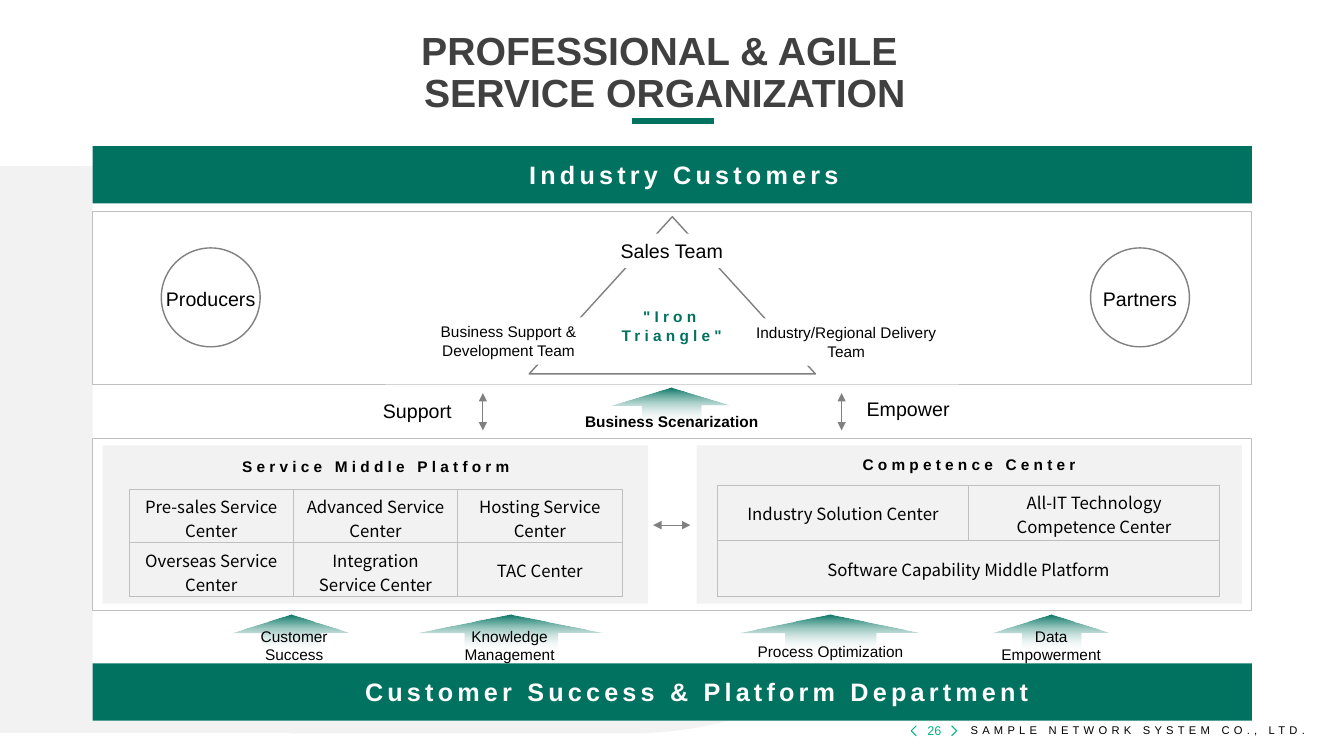
from dataclasses import dataclass
import pptx
import pptx.util
import pptx.dml.color
import pptx.enum.shapes
import pptx.enum.text
import pptx.oxml
import pptx.oxml.ns
from lxml import etree

Pt = pptx.util.Pt
Kind = pptx.enum.shapes.MSO_SHAPE
Align = pptx.enum.text.PP_ALIGN
Anchor = pptx.enum.text.MSO_ANCHOR


@dataclass(frozen=True)
class Theme:
    green: str = "017260"
    mint: str = "04B384"
    pale: str = "F2F2F2"
    white: str = "FFFFFF"
    black: str = "000000"
    dark: str = "404040"
    gray: str = "808080"
    edge: str = "BFBFBF"
    font: str = "Arial"
    grid_font: str = "Noto Sans CJK SC"
    title: float = 28
    bar: float = 18
    role: float = 14
    cell: float = 12
    note: float = 11
    page: float = 9
    foot: float = 8


T = Theme()


@dataclass(frozen=True)
class Box:
    x: float
    y: float
    w: float
    h: float


@dataclass(frozen=True)
class Label:
    text: str
    box: Box
    size: float = T.note
    color: str = T.black
    bold: bool = False
    wide: bool = False
    fill: str = ""
    align: int = Align.CENTER
    anchor: int = Anchor.TOP
    lead: float = 1.0


@dataclass(frozen=True)
class Form:
    kind: int
    box: Box
    fill: str = ""
    line: str = ""
    width: float = 1


@dataclass(frozen=True)
class Rise:
    x: float
    y: float
    w: float
    note: Label


@dataclass(frozen=True)
class Rule:
    x1: float
    y1: float
    x2: float
    y2: float
    color: str = T.gray
    width: float = 0.5
    heads: bool = True


@dataclass(frozen=True)
class Grid:
    box: Box
    rows: tuple


deck = pptx.Presentation()
deck.slide_width, deck.slide_height = Pt(960), Pt(540)
slide = deck.slides.add_slide(deck.slide_layouts[6])
shapes = slide.shapes


def rgb(code: str):
    return pptx.dml.color.RGBColor.from_string(code)


def place(box: Box) -> tuple:
    return Pt(box.x), Pt(box.y), Pt(box.w), Pt(box.h)


def style(para, size: float, color: str, font: str = T.font,
          bold: bool = False, wide: bool = False) -> None:
    for run in para.runs:
        run.font.name, run.font.size, run.font.bold = font, Pt(size), bold
        run.font.color.rgb = rgb(color)
        if wide:
            run.font._element.set("spc", "300")


def write(label: Label) -> None:
    item = shapes.add_textbox(*place(label.box))
    if label.fill:
        item.fill.solid()
        item.fill.fore_color.rgb = rgb(label.fill)
    frame = item.text_frame
    frame.word_wrap = True
    frame.vertical_anchor = label.anchor
    frame.text = label.text
    para = frame.paragraphs[0]
    para.alignment = label.align
    para.line_spacing = label.lead
    style(para, label.size, label.color, bold=label.bold, wide=label.wide)


def draw(form: Form):
    item = shapes.add_shape(form.kind, *place(form.box))
    item.shadow.inherit = False
    if form.fill:
        item.fill.solid()
        item.fill.fore_color.rgb = rgb(form.fill)
    else:
        item.fill.background()
    if form.line:
        item.line.color.rgb = rgb(form.line)
        item.line.width = Pt(form.width)
    else:
        item.line.fill.background()
    return item


def lift(rise: Rise) -> None:
    item = draw(Form(Kind.UP_ARROW, Box(rise.x, rise.y, rise.w, 25.9)))
    item.fill.gradient()
    item.fill.gradient_angle = 270
    for stop, code in zip(item.fill.gradient_stops, (T.green, T.white)):
        stop.color.rgb = rgb(code)
    last = item._element.xpath(".//a:gs/a:srgbClr")[-1]
    etree.SubElement(last, pptx.oxml.ns.qn("a:alpha")).set("val", "0")
    write(rise.note)


def link(rule: Rule) -> None:
    item = shapes.add_connector(
        pptx.enum.shapes.MSO_CONNECTOR.STRAIGHT,
        Pt(rule.x1), Pt(rule.y1), Pt(rule.x2), Pt(rule.y2))
    item.line.color.rgb = rgb(rule.color)
    item.line.width = Pt(rule.width)
    if rule.heads:
        line = item.line._get_or_add_ln()
        for end in ("a:headEnd", "a:tailEnd"):
            etree.SubElement(line, pptx.oxml.ns.qn(end)).set("type", "triangle")
    etree.SubElement(item._element.spPr, pptx.oxml.ns.qn("a:effectLst"))


def edge(cell) -> None:
    props = cell._tc.get_or_add_tcPr()
    for side in ("L", "R", "T", "B"):
        props.append(pptx.oxml.parse_xml(
            f'<a:ln{side} {pptx.oxml.ns.nsdecls("a")} w="6350"><a:solidFill>'
            f'<a:srgbClr val="{T.edge}"/></a:solidFill></a:ln{side}>'))
    cell.fill.background()


def chart(grid: Grid) -> None:
    rows, cols = len(grid.rows), len(grid.rows[0])
    table = shapes.add_table(rows, cols, *place(grid.box)).table
    table.first_row = table.horz_banding = False
    for col in table.columns:
        col.width = Pt(grid.box.w / cols)
    for row, texts in zip(table.rows, grid.rows):
        row.height = Pt(grid.box.h / rows)
        for cell, text in zip(row.cells, texts):
            edge(cell)
            cell.vertical_anchor = Anchor.MIDDLE
            cell.text = text
            para = cell.text_frame.paragraphs[0]
            para.alignment = Align.CENTER
            style(para, T.cell, T.black, T.grid_font)
        if len(texts) > 1 and not texts[-1]:
            row.cells[0].merge(row.cells[cols - 1])


def hook(x: float, tip: float) -> None:
    pen = shapes.build_freeform(Pt(x), Pt(518.4))
    pen.add_line_segments([(Pt(tip), Pt(522)), (Pt(x), Pt(525.6))], close=False)
    item = pen.convert_to_shape()
    item.shadow.inherit = False
    item.fill.background()
    item.line.color.rgb = rgb(T.mint)
    item.line.width = Pt(0.75)


def band(y: float) -> Box:
    return Box(66.2, y, 828, 41)


def main() -> None:
    write(Label("SAMPLE NETWORK SYSTEM CO., LTD.", Box(686.2, 513.4, 273, 17.3),
                T.foot, wide=True, align=Align.LEFT))
    hook(679.7, 683.3)
    hook(654.5, 650.9)
    write(Label("26", Box(650.9, 507.6, 33.1, 28.8), T.page, T.mint, anchor=Anchor.MIDDLE))
    draw(Form(Kind.RECTANGLE, Box(0, 118.8, 210.2, 404.6), T.pale, T.pale))
    draw(Form(Kind.FLOWCHART_DELAY, Box(208.1, 118.8, 481.7, 404.6), T.pale, T.pale))
    link(Rule(451.4, 86.4, 509.8, 86.4, T.green, 4.5, False))
    write(Label("PROFESSIONAL & AGILE \vSERVICE ORGANIZATION", Box(0, 9.4, 949.7, 86.4),
                T.title, T.dark, True, anchor=Anchor.MIDDLE, lead=0.9))
    draw(Form(Kind.RECTANGLE, Box(66.2, 104.4, 828, 410.4), T.white))
    draw(Form(Kind.ISOSCELES_TRIANGLE, Box(378, 154.8, 204.5, 112.3), line=T.gray))
    for y, text, x, w in ((104.4, "Industry Customers", 298.1, 380.9),
                          (473.8, "Customer Success & Platform Department", 240.5, 514.8)):
        draw(Form(Kind.RECTANGLE, band(y), T.green))
        write(Label(text, Box(x, y + 5.8, w, 28.8), T.bar, T.white, True, True))
    for y in (151.2, 313.2):
        draw(Form(Kind.RECTANGLE, Box(66.2, y, 828, 123.1), line=T.edge, width=0.5))
    for x in (73.4, 497.5):
        draw(Form(Kind.RECTANGLE, Box(x, 318.2, 389.5, 113), T.pale))
    for rise in (
        Rise(437.8, 276.5, 84.2,
             Label("Business Scenarization", Box(410.4, 290.9, 139, 20.9), bold=True)),
        Rise(166.3, 439.2, 84.2, Label("Customer Success", Box(170.6, 444.2, 79.2, 33.8))),
        Rise(298.1, 439.2, 133.9, Label("Knowledge Management", Box(301, 444.2, 126, 33.8))),
        Rise(528.5, 439.2, 129.6, Label("Process Optimization", Box(532.1, 455, 122.4, 20.9))),
        Rise(709.2, 439.2, 84.2, Label("Data Empowerment", Box(698.4, 444.2, 105.1, 33.8))),
    ):
        lift(rise)
    for rule in (Rule(344.9, 280.8, 344.9, 307.4), Rule(601.2, 280.8, 601.2, 307.4),
                 Rule(493.2, 375.1, 466.6, 375.1)):
        link(rule)
    chart(Grid(Box(92.2, 349.2, 352.1, 77), (
        ("Pre-sales Service Center", "Advanced Service Center", "Hosting Service Center"),
        ("Overseas Service Center", "Integration Service Center", "TAC Center"))))
    chart(Grid(Box(512.6, 346.3, 358.6, 79.9), (
        ("Industry Solution Center", "All-IT Technology Competence Center"),
        ("Software Capability Middle Platform", ""))))
    for label in (
        Label("Service Middle Platform", Box(107.3, 323.3, 322.6, 20.9), bold=True, wide=True),
        Label("Competence Center", Box(578.9, 321.8, 226.8, 20.9), bold=True, wide=True),
        Label("Support", Box(262.8, 281.5, 70.6, 24.5), T.role),
        Label("Empower", Box(598.3, 280.1, 100.8, 24.5), T.role),
        Label("Sales Team", Box(420.5, 167, 118.8, 24.5), T.role, fill=T.white),
        Label("Business Support & Development Team", Box(290.2, 226.8, 146.2, 33.8), fill=T.white),
        Label("Industry/Regional Delivery Team", Box(531.4, 227.5, 146.2, 33.8), fill=T.white),
        Label('"Iron Triangle"', Box(432.7, 216, 94.3, 33.8), color=T.green, bold=True, wide=True),
        Label("Producers", Box(108, 201.6, 85, 24.5), T.role),
        Label("Partners", Box(774, 201.6, 80.6, 24.5), T.role),
    ):
        write(label)
    for x in (115.2, 779):
        draw(Form(Kind.OVAL, Box(x, 177.1, 70.6, 70.6), line=T.gray))
    deck.save("out.pptx")


if __name__ == "__main__":
    main()
